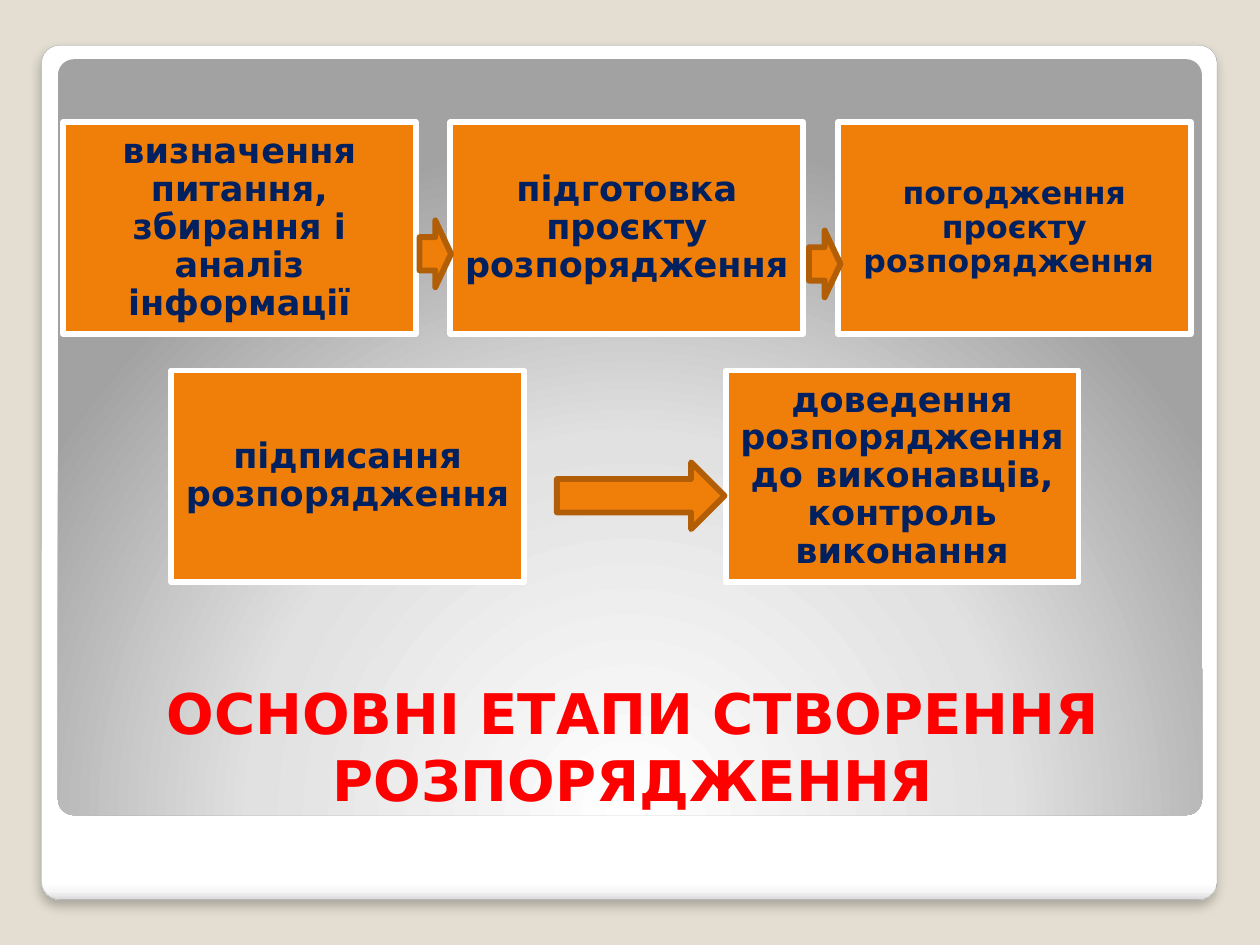
from lxml.etree import SubElement
from pptx import Presentation
from pptx.dml.color import RGBColor
from pptx.enum.shapes import MSO_SHAPE
from pptx.enum.text import MSO_ANCHOR, PP_ALIGN
from pptx.oxml import parse_xml
from pptx.oxml.ns import nsdecls, qn
from pptx.util import Inches, Pt

FONT = "DejaVu Sans"
HEADING = "ОСНОВНІ ЕТАПИ СТВОРЕННЯ РОЗПОРЯДЖЕННЯ"
STAGE_ROWS = [
    (0.5, 0.97, 3.075, [
        ("визначення питання, збирання і аналіз інформації", 20),
        ("підготовка проєкту розпорядження", 20),
        ("погодження проєкту розпорядження ", 18),
    ]),
    (1.36, 2.94, 4.4, [
        ("підписання розпорядження", 20),
        ("доведення розпорядження до виконавців, контроль виконання", 20),
    ]),
]
STAGE_SIZE = (2.8, 1.68)
ARROWS = [(3.33, 1.75, 0.25), (6.42, 1.83, 0.25), (4.42, 3.67, 1.33)]
ARROW_HEIGHT = 0.53
FRAME_STOPS = [(0, "FFFFFF"), (98, "FFFFFF"), (99, "F7F7F7"), (100, "DADADA")]
PANEL_STOPS = [(0, "FFFFFF"), (55, "E1E1E1"), (100, "A2A2A2")]
FRAME_DIRECTION = '<a:lin ang="5400000" scaled="0"/>'
PANEL_DIRECTION = ('<a:path path="circle"><a:fillToRect l="50000" t="175000" '
                   'r="50000" b="-75000"/></a:path>')


def color(value):
    return RGBColor.from_string(value)


def add_box(slide, kind, at, fill=None, line=None, width=3.35):
    box = slide.shapes.add_shape(kind, *map(Inches, at))
    box.shadow.inherit = False
    if fill:
        box.fill.solid()
        box.fill.fore_color.rgb = color(fill)
    if line:
        box.line.color.rgb = color(line)
        box.line.width = Pt(width)
    else:
        box.line.fill.background()
    return box


def add_rounded(slide, at, stops, direction, line=None):
    box = add_box(slide, MSO_SHAPE.ROUNDED_RECTANGLE, at, line=line, width=0.16)
    box.adjustments[0] = 0.021
    box.fill.gradient()
    properties = box.element.spPr
    stop_list = "".join(
        f'<a:gs pos="{position * 1000}"><a:srgbClr val="{value}"/></a:gs>'
        for position, value in stops)
    gradient = parse_xml(f'<a:gradFill {nsdecls("a")} rotWithShape="1">'
                         f'<a:gsLst>{stop_list}</a:gsLst>{direction}</a:gradFill>')
    properties.replace(properties.find(qn("a:gradFill")), gradient)
    return box


def add_shadow(box):
    effects = box.element.spPr.find(qn("a:effectLst"))
    shadow = SubElement(effects, qn("a:outerShdw"), blurRad=str(Pt(6)),
                        dist=str(Pt(4)), dir="5400000", algn="t", rotWithShape="0")
    tint = SubElement(shadow, qn("a:srgbClr"), val="000000")
    SubElement(tint, qn("a:alpha"), val="25000")


def write(frame, text, size, value, anchor):
    frame.word_wrap = True
    frame.vertical_anchor = anchor
    paragraph = frame.paragraphs[0]
    paragraph.alignment = PP_ALIGN.CENTER
    run = paragraph.add_run()
    run.text = text
    run.font.name = FONT
    run.font.size = Pt(size)
    run.font.bold = True
    run.font.color.rgb = color(value)
    return paragraph


def add_stage(slide, left, top, text, size):
    stage = add_box(slide, MSO_SHAPE.RECTANGLE, (left, top, *STAGE_SIZE),
                    "F07F09", "FFFFFF")
    frame = stage.text_frame
    inset = Inches(size * 0.004)
    frame.margin_left = frame.margin_right = inset
    frame.margin_top = frame.margin_bottom = inset
    paragraph = write(frame, text, size, "002060", MSO_ANCHOR.MIDDLE)
    paragraph.line_spacing = 0.9


def main():
    deck = Presentation()
    deck.slide_width, deck.slide_height = Inches(10), Inches(7.5)
    slide = deck.slides.add_slide(deck.slide_layouts[5])
    slide.background.fill.solid()
    slide.background.fill.fore_color.rgb = color("E3DED1")

    frame = add_rounded(slide, (0.33, 0.36, 9.33, 6.78), FRAME_STOPS,
                        FRAME_DIRECTION, "A4A4A4")
    add_shadow(frame)
    panel = add_rounded(slide, (0.46, 0.47, 9.08, 6), PANEL_STOPS, PANEL_DIRECTION)

    heading = slide.shapes.title
    heading.left, heading.top = Inches(0.55), Inches(5.08)
    heading.width, heading.height = Inches(8.95), Inches(1.42)
    write(heading.text_frame, HEADING, 32, "FF0000", MSO_ANCHOR.BOTTOM)
    panel.element.addnext(heading.element)

    for left, top, step, stages in STAGE_ROWS:
        for column, (text, size) in enumerate(stages):
            add_stage(slide, left + column * step, top, text, size)
    for left, top, width in ARROWS:
        add_box(slide, MSO_SHAPE.RIGHT_ARROW, (left, top, width, ARROW_HEIGHT),
                "F07F09", "B25E07")
    deck.save("out.pptx")


if __name__ == "__main__":
    main()
